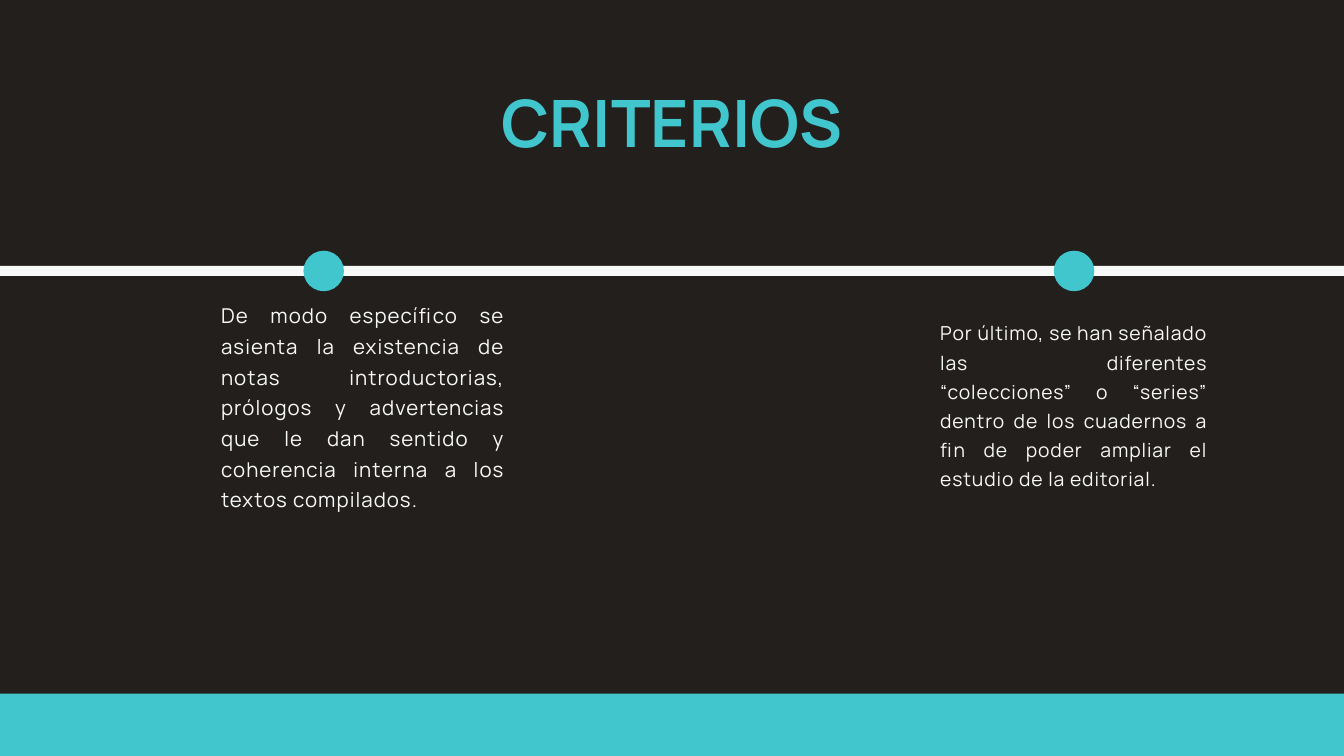
from pptx import Presentation
from pptx.dml.color import RGBColor
from pptx.enum import shapes, text
from pptx.util import Pt

COLORS = {"dark": "231F1D", "teal": "40C6CC", "light": "F7F9F8"}
FONT = "Manrope"
W, H = 1440, 810

prs = Presentation()
prs.slide_width, prs.slide_height = Pt(W), Pt(H)
s = prs.slides.add_slide(prs.slide_layouts[5])
s.background.fill.solid()
s.background.fill.fore_color.rgb = RGBColor.from_string(COLORS["dark"])


def add_block(kind, x, y, w, h, color):
    sp = s.shapes.add_shape(kind, Pt(x), Pt(y), Pt(w), Pt(h))
    sp.shadow.inherit = False
    sp.fill.solid()
    sp.fill.fore_color.rgb = RGBColor.from_string(COLORS[color])
    sp.line.fill.background()


def set_text(sp, words, size, leading, color, align):
    tf = sp.text_frame
    tf.word_wrap = True
    tf.auto_size = text.MSO_AUTO_SIZE.NONE
    tf.vertical_anchor = text.MSO_ANCHOR.TOP
    tf.margin_left = tf.margin_top = tf.margin_right = tf.margin_bottom = 0
    p = tf.paragraphs[0]
    r = p.add_run()
    r.text = words
    p.alignment = align
    p.line_spacing = Pt(leading)
    p.space_before = Pt(0)
    p.font.name = FONT
    p.font.size = Pt(size)
    p.font.color.rgb = RGBColor.from_string(COLORS[color])
    return p, r


# Title
title = s.shapes.title
title.left, title.top, title.width, title.height = Pt(134), Pt(91.4), Pt(W - 2 * 134), Pt(82)
p, r = set_text(title, "CRITERIOS", 70, 80.5, "teal", text.PP_ALIGN.CENTER)
p.font.bold = True

# Timeline and footer band, both bleeding past the slide edges
BLEED = 62
add_block(shapes.MSO_SHAPE.RECTANGLE, -BLEED, 285, W + 2 * BLEED, 10.6, "light")
add_block(shapes.MSO_SHAPE.RECTANGLE, -BLEED, 743.3, W + 2 * BLEED, 101, "teal")

# Milestones: dot centre, text box, size, leading, letter spacing, words
DOT = 43.4
milestones = [
    (346.8, (236.9, 318.2, 303.8, 223), 21.9, 32.9, 110,
     "De modo específico se asienta la existencia de notas introductorias, "
     "prólogos y advertencias que le dan sentido y coherencia interna a los "
     "textos compilados."),
    (1150.8, (1007.3, 338.4, 286.6, 181.4), 20.7, 31.1, 100,
     "Por último, se han señalado las diferentes “colecciones” o “series” "
     "dentro de los cuadernos a fin de poder ampliar el estudio de la editorial."),
]
for center, box, size, leading, tracking, words in milestones:
    add_block(shapes.MSO_SHAPE.OVAL, center - DOT / 2, 290.3 - DOT / 2, DOT, DOT, "teal")
    sp = s.shapes.add_textbox(*[Pt(v) for v in box])
    p, r = set_text(sp, words, size, leading, "light", text.PP_ALIGN.JUSTIFY)
    r.font._element.set("spc", str(tracking))

prs.save("out.pptx")
